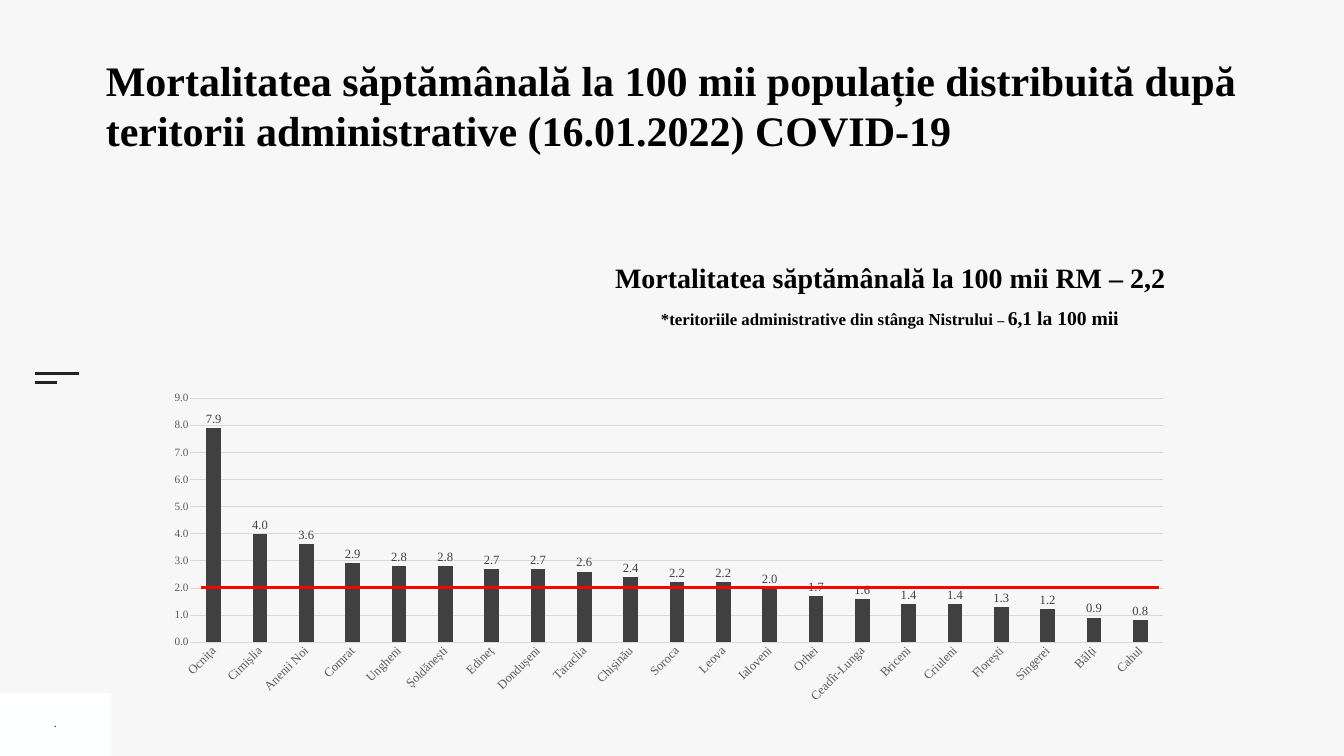
from dataclasses import dataclass

from lxml import etree
from pptx import Presentation
from pptx import util as u
from pptx.chart.data import CategoryChartData
from pptx.dml.color import RGBColor
from pptx.enum import chart as ch, shapes, text
from pptx.oxml import parse_xml
from pptx.oxml.ns import nsdecls, qn

COLS, ROWS = 160, 90

DEATHS = {
    "Ocnița": 7.9, "Cimișlia": 4.0, "Anenii Noi": 3.6, "Comrat": 2.9,
    "Ungheni": 2.8, "Șoldănești": 2.8, "Edineț": 2.7, "Dondușeni": 2.7,
    "Taraclia": 2.6, "Chișinău": 2.4, "Soroca": 2.2, "Leova": 2.2,
    "Ialoveni": 2.0, "Orhei": 1.7, "Ceadîr-Lunga": 1.6, "Briceni": 1.4,
    "Criuleni": 1.4, "Florești": 1.3, "Sîngerei": 1.2, "Bălți": 0.9,
    "Cahul": 0.8,
}


@dataclass(frozen=True)
class Theme:
    font: str = "Times New Roman"
    mark_font: str = "Open Sans"
    back: str = "F7F7F7"
    corner: str = "FEFFFF"
    ink: str = "000000"
    mark: str = "222222"
    bar: str = "404040"
    axis: str = "595959"
    grid: str = "D9D9D9"
    limit: str = "FF0000"
    title: int = 60
    subtitle: int = 40
    strong: int = 28
    note: int = 24
    dash: int = 20
    label: int = 18
    small: int = 16


class SlideBuilder:
    """Places elements on a slide of COLS by ROWS grid cells."""

    def __init__(self, prs, theme):
        self.prs, self.theme = prs, theme
        self.s = prs.slides.add_slide(prs.slide_layouts[5])
        fill = self.s.background.fill
        fill.solid()
        fill.fore_color.rgb = RGBColor.from_string(theme.back)

    def x(self, cols):
        return round(self.prs.slide_width * cols / COLS)

    def y(self, rows):
        return round(self.prs.slide_height * rows / ROWS)

    def box(self, col, row, cols, rows):
        return self.x(col), self.y(row), self.x(cols), self.y(rows)

    def style(self, font, size, color, bold=False, name=None):
        font.name, font.size, font.bold = name or self.theme.font, u.Pt(size), bold
        font.color.rgb = RGBColor.from_string(color)

    def title(self, words, *cells):
        sp = self.s.shapes.title
        sp.left, sp.top, sp.width, sp.height = self.box(*cells)
        tf = sp.text_frame
        tf.text = words
        tf.auto_size = text.MSO_AUTO_SIZE.NONE
        tf.vertical_anchor = text.MSO_ANCHOR.TOP
        p = tf.paragraphs[0]
        p.alignment = text.PP_ALIGN.LEFT
        self.style(p.runs[0].font, self.theme.title, self.theme.ink, True)

    def rect(self, color, *cells):
        sp = self.s.shapes.add_shape(shapes.MSO_SHAPE.RECTANGLE, *self.box(*cells))
        sp.shadow.inherit = False
        sp.fill.solid()
        sp.fill.fore_color.rgb = RGBColor.from_string(color)
        sp.line.fill.background()

    def rule(self, color, width, col, row, cols):
        """Draw a horizontal line."""
        left, top, length, _ = self.box(col, row, cols, 0)
        sp = self.s.shapes.add_connector(
            shapes.MSO_CONNECTOR.STRAIGHT, left, top, left + length, top)
        sp.line.color.rgb = RGBColor.from_string(color)
        sp.line.width = u.Pt(width)
        etree.SubElement(sp.element.spPr, qn("a:effectLst"))

    def label(self, parts, *cells, color=None, bold=True, name=None, wrap=False):
        """Add one centred line made of (words, size) parts."""
        tf = self.s.shapes.add_textbox(*self.box(*cells)).text_frame
        tf.word_wrap = wrap
        tf.vertical_anchor = text.MSO_ANCHOR.MIDDLE
        p = tf.paragraphs[0]
        p.alignment = text.PP_ALIGN.CENTER
        for words, size in parts:
            r = p.add_run()
            r.text = words
            self.style(r.font, size, color or self.theme.ink, bold, name)

    def columns(self, values, *cells):
        t = self.theme
        data = CategoryChartData(number_format="0.0")
        data.categories = list(values)
        data.add_series("Series 1", list(values.values()))
        chart = self.s.shapes.add_chart(
            ch.XL_CHART_TYPE.COLUMN_CLUSTERED, *self.box(*cells), data).chart
        chart.has_legend = chart.has_title = False
        self.style(chart.font, t.note, t.ink)

        plot = chart.plots[0]
        plot.gap_width, plot.overlap, plot.vary_by_categories = 219, -27, False
        fill = plot.series[0].format.fill
        fill.solid()
        fill.fore_color.rgb = RGBColor.from_string(t.bar)
        plot.has_data_labels = True
        labels = plot.data_labels
        labels.show_value = True
        labels.position = ch.XL_LABEL_POSITION.OUTSIDE_END
        self.style(labels.font, t.label, t.bar)

        cat, val = chart.category_axis, chart.value_axis
        val.minimum_scale, val.maximum_scale, val.major_unit = 0, 9, 1
        val.has_major_gridlines = True
        for axis, size in ((cat, t.label), (val, t.small)):
            axis.major_tick_mark = axis.minor_tick_mark = ch.XL_TICK_MARK.NONE
            self.style(axis.tick_labels.font, size, t.axis)
        for line in (cat.format.line, val.major_gridlines.format.line):
            line.color.rgb = RGBColor.from_string(t.grid)
            line.width = u.Pt(0.75)
        val.format.line.fill.background()
        for labels in (plot.data_labels, val.tick_labels):
            labels.number_format, labels.number_format_is_linked = "0.0", False
        chart.element.xpath(".//c:catAx/c:txPr/a:bodyPr")[0].set("rot", "-2700000")
        self.place_plot(chart, x=0.086, y=0.074, w=0.888, h=0.7)

    def place_plot(self, chart, **shares):
        """Fix the inner plot area as shares of the chart."""
        area = chart.element.xpath(".//c:plotArea")[0]
        for old in area.findall(qn("c:layout")):
            area.remove(old)
        modes = '<c:xMode val="edge"/><c:yMode val="edge"/>'
        sizes = "".join(f'<c:{k} val="{v}"/>' for k, v in shares.items())
        area.insert(0, parse_xml(
            f'<c:layout {nsdecls("c")}><c:manualLayout><c:layoutTarget val="inner"/>'
            f"{modes}{sizes}</c:manualLayout></c:layout>"))


def main():
    prs = Presentation()
    prs.slide_width, prs.slide_height = u.Inches(26.67), u.Inches(15)
    t = Theme()
    s = SlideBuilder(prs, t)
    s.rect(t.corner, 0, 82.56, 13.2, 7.44)
    for row, cols in ((44.46, 5.28), (45.54, 2.64)):
        s.rule(t.mark, 3, 4.14, row, cols)
    s.columns(DEATHS, 11.46, 44.34, 130.44, 41.46)
    s.rule(t.limit, 4.5, 23.88, 69.96, 114.12)
    s.label([(".", t.small)], 5.82, 84.66, 1.56, 2.82,
            color=t.mark, bold=False, name=t.mark_font)
    s.title("Mortalitatea săptămânală la 100 mii populație distribuită după "
            "teritorii administrative (16.01.2022) COVID-19", 12, 6.18, 136, 12.72)
    s.label([("Mortalitatea săptămânală la 100 mii RM – 2,2", t.subtitle)],
            72.24, 30.72, 67.44, 4.62)
    s.label([("*teritoriile administrative din stânga Nistrului ", t.note),
             ("– ", t.dash), ("6,1 la 100 mii", t.strong)],
            76.98, 36.12, 57.9, 3.42, wrap=True)
    prs.save("out.pptx")


if __name__ == "__main__":
    main()
